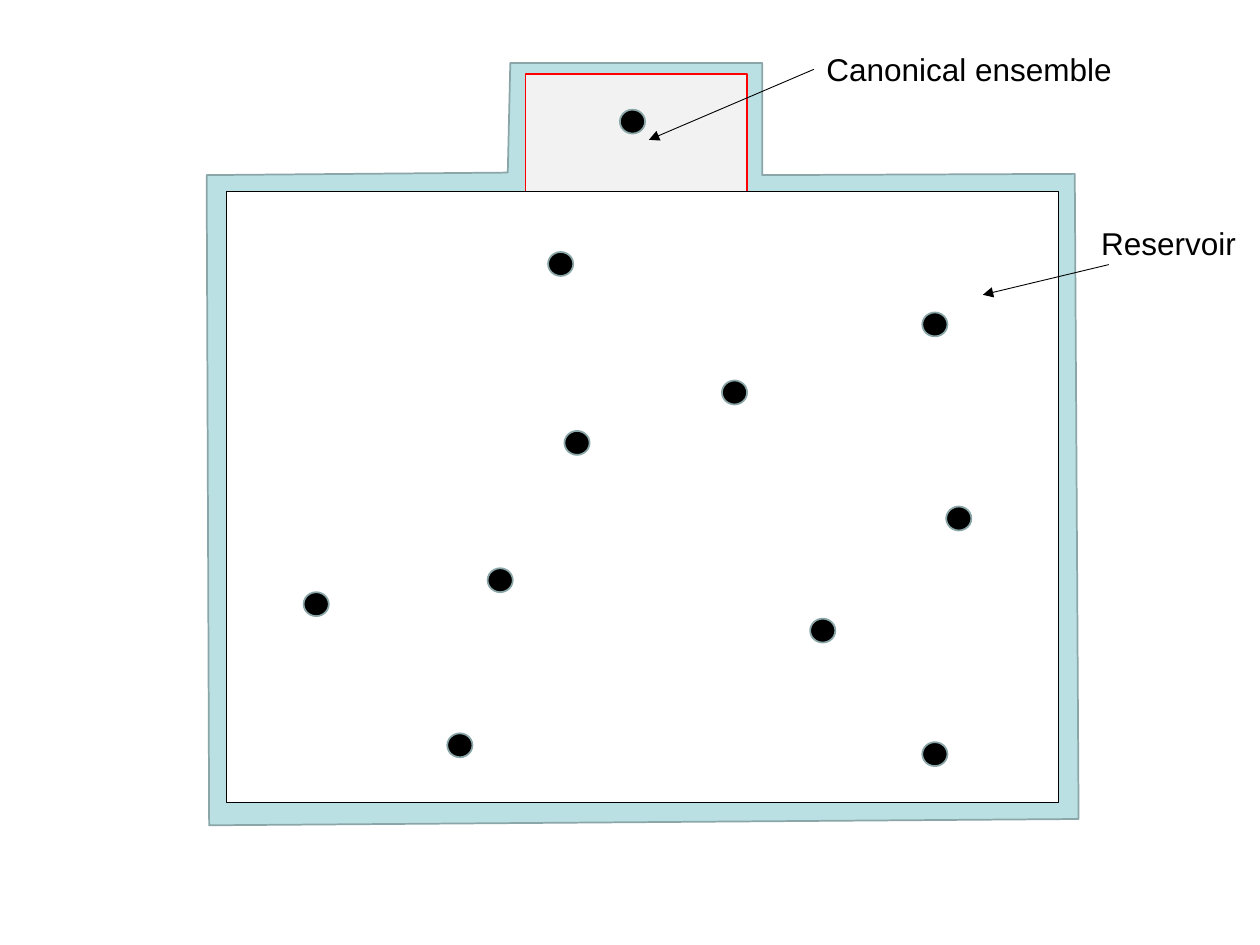
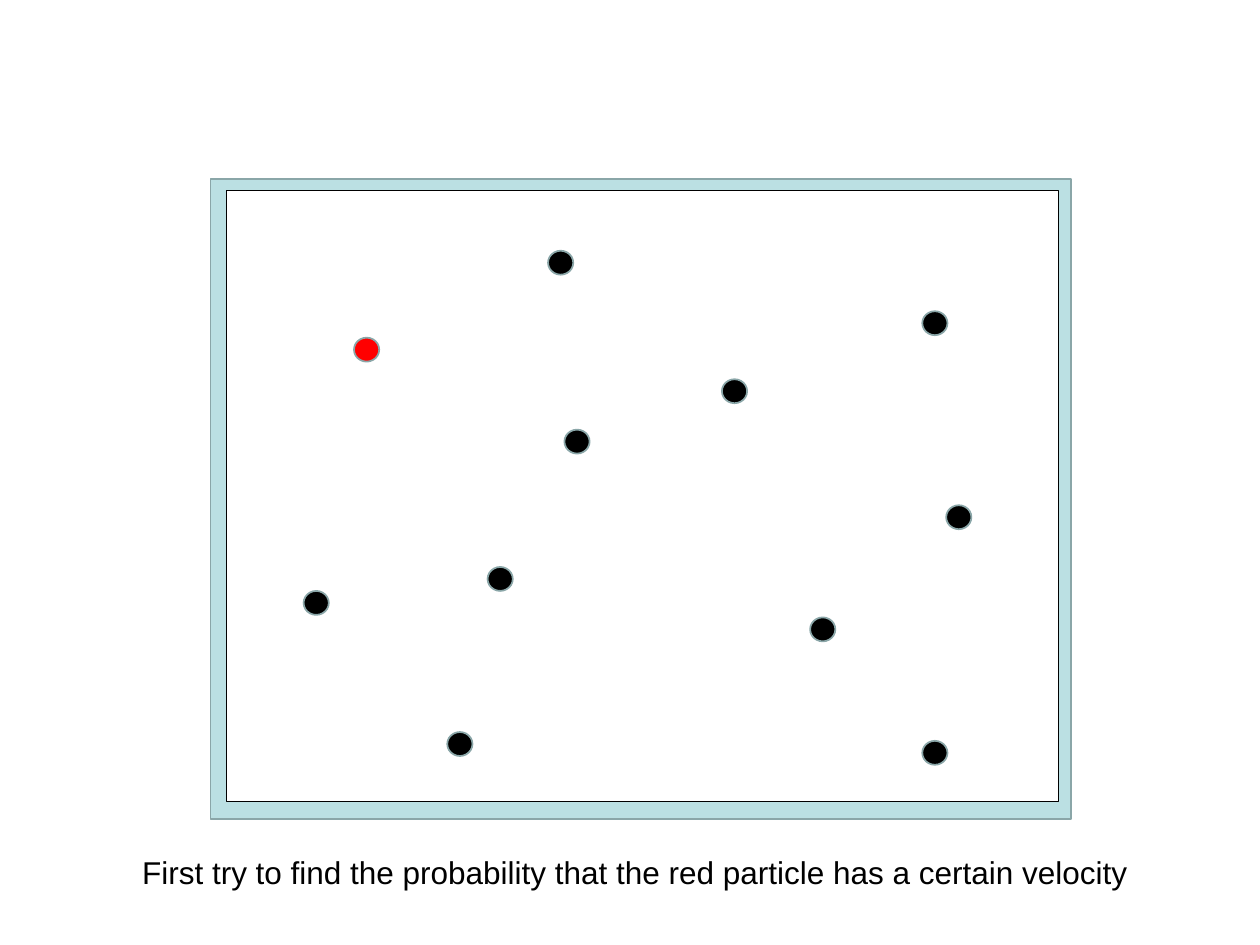
import pptx
import pptx.util
import pptx.dml.color
import pptx.enum.shapes
import pptx.enum.text
import pptx.oxml.ns
import lxml.etree

Inches = pptx.util.Inches
RGBColor = pptx.dml.color.RGBColor
Kind = pptx.enum.shapes.MSO_SHAPE

BLACK = RGBColor(0x00, 0x00, 0x00)
WHITE = RGBColor(0xFF, 0xFF, 0xFF)
RED = RGBColor(0xFF, 0x00, 0x00)
GREY = RGBColor(0xF2, 0xF2, 0xF2)
WALL = RGBColor(0xBB, 0xE0, 0xE3)
EDGE = RGBColor(0x8A, 0xA6, 0xA8)

FONT = "Arial"
DOT = (0.2, 0.19)
ROOM = (1.8, 1.52, 6.6, 4.85)
# Left and top of each reservoir particle
DOTS = [(3.87, 4.51), (5.73, 3.02), (6.43, 4.91), (4.48, 3.42), (2.41, 4.7),
        (7.32, 2.48), (7.32, 5.89), (3.55, 5.82), (4.35, 2), (7.51, 4.02)]


def paint(shape, fill, line=EDGE, width=1):
    shape.shadow.inherit = False
    shape.fill.solid()
    shape.fill.fore_color.rgb = fill
    shape.line.color.rgb = line
    shape.line.width = pptx.util.Pt(width)


def write(slide, text, at, size=18, color=BLACK, wrap=False):
    box = slide.shapes.add_textbox(*map(Inches, at))
    frame = box.text_frame
    frame.word_wrap = wrap
    frame.auto_size = pptx.enum.text.MSO_AUTO_SIZE.SHAPE_TO_FIT_TEXT
    run = frame.paragraphs[0].add_run()
    run.text = text
    run.font.name = FONT
    run.font.size = pptx.util.Pt(size)
    run.font.color.rgb = color
    return box


deck = pptx.Presentation()
deck.slide_width = Inches(10)
deck.slide_height = Inches(7.5)
blank = deck.slide_layouts[6]
first = deck.slides.add_slide(blank)
second = deck.slides.add_slide(blank)

# Walls: with a small chamber on the first slide, plain on the second
rim = [(4.03, 1.37), (1.64, 1.39), (1.66, 6.55), (8.56, 6.5),
       (8.53, 1.38), (6.05, 1.39), (6.05, 0.5), (4.05, 0.5)]
points = [(Inches(x), Inches(y)) for x, y in rim]
pen = first.shapes.build_freeform(*points[0])
pen.add_line_segments(points[1:], close=True)
paint(pen.convert_to_shape(), WALL)

cell = first.shapes.add_shape(
    Kind.RECTANGLE, *map(Inches, (4.17, 0.59, 1.76, 0.93)))
paint(cell, GREY, line=RED)

wall = second.shapes.add_shape(
    Kind.RECTANGLE, *map(Inches, (1.67, 1.42, 6.83, 5.08)))
paint(wall, WALL)

# Reservoir and particles; the second slide sits a touch higher
for slide, rise, lone, hue in [(first, 0, (4.92, 0.87), BLACK),
                               (second, 0.01, (2.81, 2.69), RED)]:
    left, top, width, height = ROOM
    room = slide.shapes.add_shape(
        Kind.RECTANGLE, *map(Inches, (left, top - rise, width, height)))
    paint(room, WHITE, line=BLACK, width=0.75)
    for x, y in [lone] + DOTS:
        dot = slide.shapes.add_shape(
            Kind.OVAL, *map(Inches, (x, y - rise) + DOT))
        paint(dot, hue if (x, y) == lone else BLACK)

# Labels with arrows; the first arrow leaves the side of its label
for text, at, start, end, joined in [
        ("Canonical ensemble", (6.46, 0.35, 2.49, 0.4),
         (6.46, 0.55), (5.15, 1.11), True),
        ("Reservoir", (8.64, 1.73, 1.28, 0.4),
         (8.8, 2.1), (7.8, 2.34), False)]:
    label = write(first, text, at)
    arrow = first.shapes.add_connector(
        pptx.enum.shapes.MSO_CONNECTOR.STRAIGHT, *map(Inches, start + end))
    if joined:
        arrow.begin_connect(label, 1)
    arrow.line.color.rgb = BLACK
    arrow.line.width = pptx.util.Pt(0.5)
    tip = lxml.etree.SubElement(
        arrow.line._get_or_add_ln(), pptx.oxml.ns.qn("a:tailEnd"))
    tip.set("type", "triangle")
    lxml.etree.SubElement(
        arrow._element.spPr, pptx.oxml.ns.qn("a:effectLst"))

# Caption
write(second, "First try to find the probability that the red particle "
      "has a certain velocity", (1.03, 6.72, 8.12, 0.4), wrap=True)

deck.save("out.pptx")
